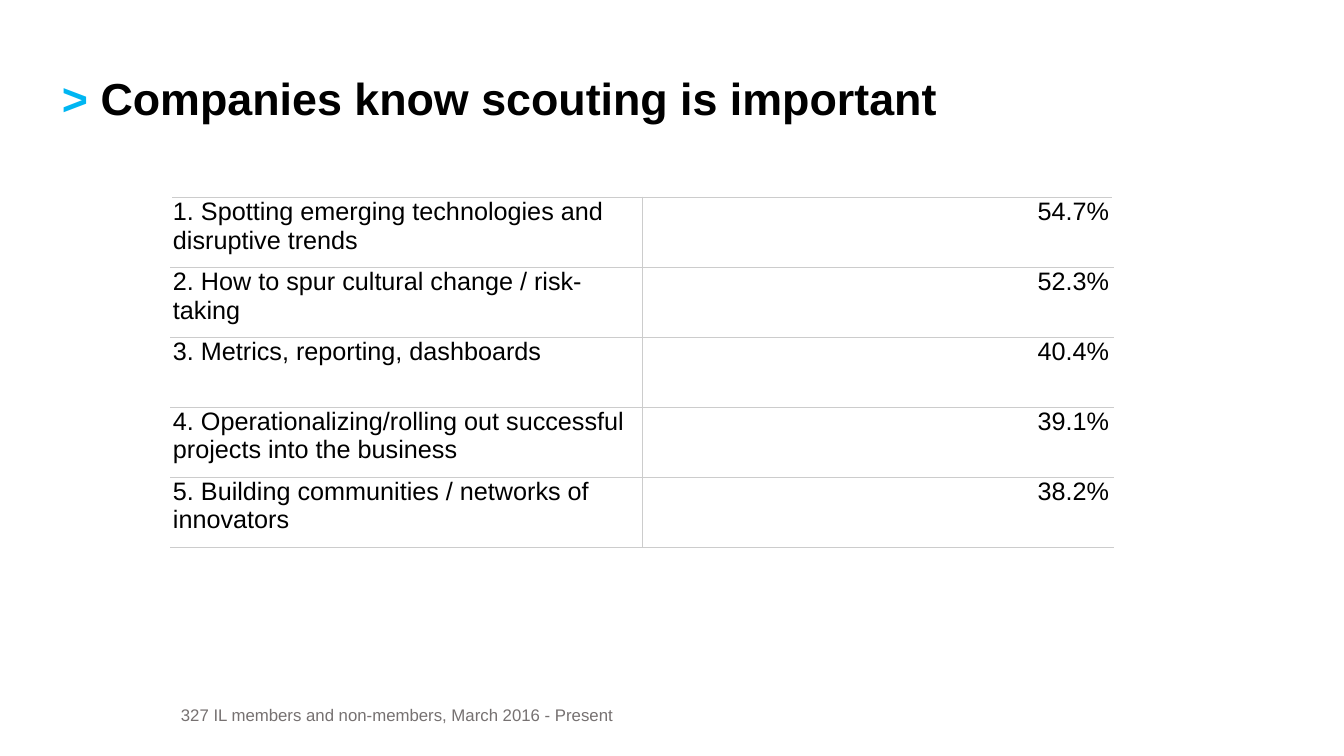
from dataclasses import dataclass

from lxml import etree
from pptx import Presentation
from pptx import util as u
from pptx.dml import color
from pptx.enum import text
from pptx.oxml import ns


@dataclass(frozen=True)
class Theme:
    font: str = "Arial"
    accent: str = "00B6F2"
    ink: str = "000000"
    muted: str = "767171"
    rule: str = "CCCCCC"
    paper: str = "FFFFFF"
    title_size: int = 32
    table_size: int = 18
    note_size: int = 12
    rule_width: float = 0.5


def px(length):
    return u.Emu(round(length * 914400 / 100.8))


class SlideBuilder:
    def __init__(self, deck, theme):
        self.theme = theme
        self.page = deck.slides.add_slide(deck.slide_layouts[6])

    def style(self, font, size, ink=None, bold=False):
        font.name = self.theme.font
        font.size = u.Pt(size)
        font.bold = bold
        if ink:
            font.color.rgb = color.RGBColor.from_string(ink)

    def text_box(self, place, spans, size, bold=False,
                 anchor=text.MSO_ANCHOR.TOP):
        box = self.page.shapes.add_textbox(*map(px, place))
        frame = box.text_frame
        frame.word_wrap = True
        frame.vertical_anchor = anchor
        para = frame.paragraphs[0]
        if len(spans) == 1:
            para.text, ink = spans[0]
            self.style(para.font, size, ink, bold)
            return
        self.style(para.font, size, bold=bold)
        for words, ink in spans:
            span = para.add_run()
            span.text = words
            span.font.color.rgb = color.RGBColor.from_string(ink)

    def border(self, cell, sides):
        properties = cell._tc.get_or_add_tcPr()
        for side in sides:
            line = etree.SubElement(properties, ns.qn(f"a:ln{side}"),
                                    w=str(u.Pt(self.theme.rule_width)))
            fill = etree.SubElement(line, ns.qn("a:solidFill"))
            etree.SubElement(fill, ns.qn("a:srgbClr"), val=self.theme.rule)

    def cell(self, cell, words, align, sides):
        cell.margin_left, cell.margin_right = px(2), px(4)
        cell.margin_top = cell.margin_bottom = px(1)
        self.border(cell, sides)
        cell.fill.solid()
        cell.fill.fore_color.rgb = color.RGBColor.from_string(self.theme.paper)
        para = cell.text_frame.paragraphs[0]
        para.text = words
        para.alignment = align
        self.style(para.font, self.theme.table_size, self.theme.ink)

    def table(self, place, rows):
        columns = ((text.PP_ALIGN.LEFT, "RTB"), (text.PP_ALIGN.RIGHT, "LTB"))
        frame = self.page.shapes.add_table(len(rows), len(columns),
                                           *map(px, place))
        table = frame.table
        table.first_row = table.horz_banding = False
        for row, values in enumerate(rows):
            for column, (align, sides) in enumerate(columns):
                self.cell(table.cell(row, column), values[column], align, sides)


def main():
    deck = Presentation()
    deck.slide_width, deck.slide_height = px(1344), px(756)
    theme = Theme()
    slide = SlideBuilder(deck, theme)

    slide.text_box((52, 66, 979, 65),
                   [("> ", theme.accent),
                    ("Companies know scouting is important", theme.ink)],
                   theme.title_size, bold=True)
    slide.table((171, 197, 942, 350), [
        ("1. Spotting emerging technologies and disruptive trends", "54.7%"),
        ("2. How to spur cultural change / risk-taking", "52.3%"),
        ("3. Metrics, reporting, dashboards", "40.4%"),
        ("4. Operationalizing/rolling out successful projects into the business",
         "39.1%"),
        ("5. Building communities / networks of innovators", "38.2%"),
    ])
    slide.text_box((171, 695, 500, 40),
                   [("327 IL members and non-members, March 2016 - Present",
                     theme.muted)],
                   theme.note_size, anchor=text.MSO_ANCHOR.MIDDLE)
    deck.save("out.pptx")


if __name__ == "__main__":
    main()
